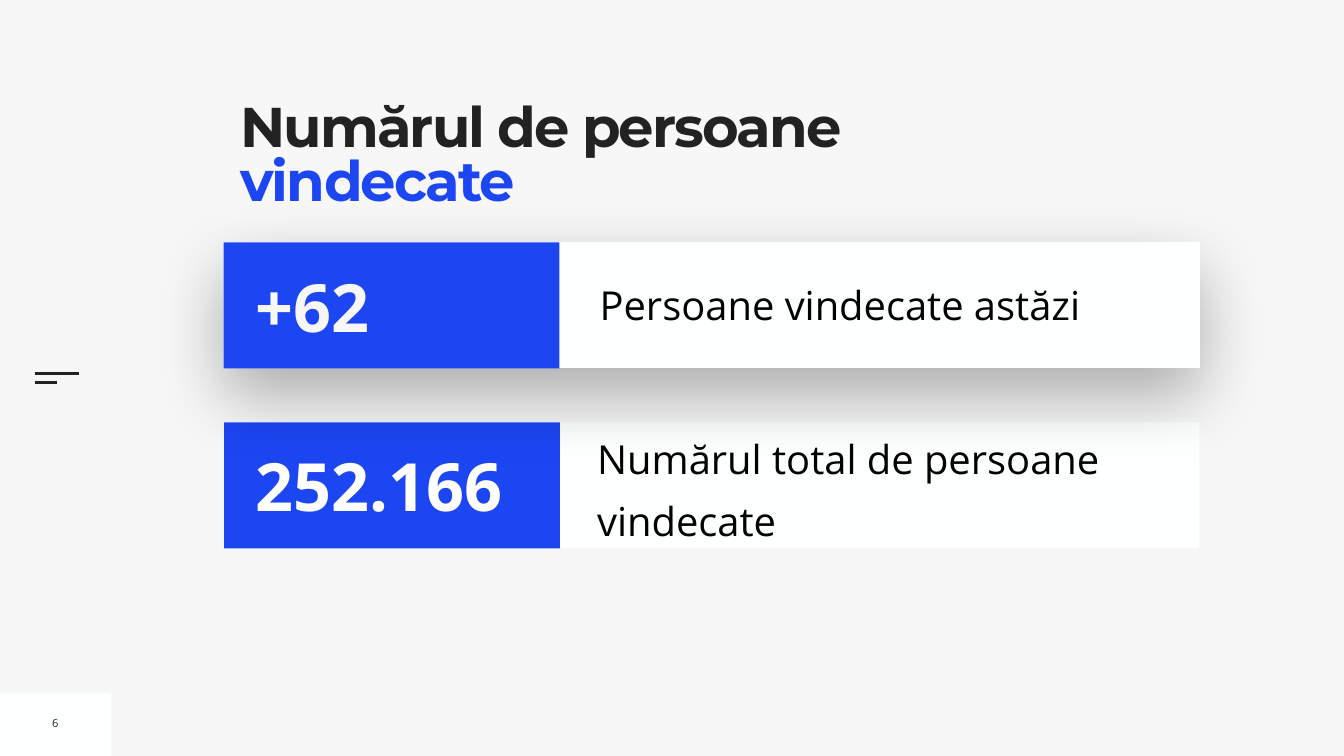
from lxml.etree import SubElement
from pptx import Presentation
from pptx.dml.color import RGBColor
from pptx.enum.shapes import MSO_CONNECTOR, MSO_SHAPE
from pptx.enum.text import MSO_ANCHOR, MSO_AUTO_SIZE, PP_ALIGN
from pptx.oxml.ns import qn
from pptx.util import Inches, Pt

BACKGROUND = RGBColor(0xF7, 0xF7, 0xF7)
PANEL = RGBColor(0xFE, 0xFF, 0xFF)
BLUE = RGBColor(0x1D, 0x46, 0xF3)
DARK = RGBColor(0x22, 0x22, 0x22)
BLACK = RGBColor(0, 0, 0)
WHITE = RGBColor(0xFF, 0xFF, 0xFF)
HEADING_FONT = "Montserrat"
BODY_FONT = "Open Sans"


def add_panel(page, left, top, width, height, color):
    panel = page.shapes.add_shape(MSO_SHAPE.RECTANGLE, Inches(left), Inches(top),
                                  Inches(width), Inches(height))
    panel.shadow.inherit = False
    panel.fill.solid()
    panel.fill.fore_color.rgb = color
    panel.line.fill.background()
    return panel


def add_soft_shadow(shape):
    """Cast a blurred shadow straight down at 30% opacity."""
    effects = shape._element.spPr.find(qn("a:effectLst"))
    shadow = SubElement(effects, qn("a:outerShdw"), blurRad=str(Pt(100)),
                        dist=str(Pt(40)), dir="5400000", rotWithShape="0")
    color = SubElement(shadow, qn("a:srgbClr"), val=str(BLACK))
    SubElement(color, qn("a:alpha"), val="30000")


def add_rule(page, left, top, length):
    rule = page.shapes.add_connector(MSO_CONNECTOR.STRAIGHT, Inches(left), Inches(top),
                                     Inches(left + length), Inches(top))
    rule.line.color.rgb = DARK
    rule.line.width = Pt(3)
    SubElement(rule._element.spPr, qn("a:effectLst"))


def add_text_box(page, left, top, width, height, inset=0.1,
                 anchor=MSO_ANCHOR.MIDDLE, wrap=True, grow=True):
    """Add an empty text box and return its first paragraph."""
    box = page.shapes.add_textbox(Inches(left), Inches(top), Inches(width), Inches(height))
    frame = box.text_frame
    frame.margin_left = frame.margin_right = Inches(inset)
    frame.margin_top = frame.margin_bottom = Inches(inset)
    frame.vertical_anchor = anchor
    frame.word_wrap = wrap
    frame.auto_size = MSO_AUTO_SIZE.SHAPE_TO_FIT_TEXT if grow else MSO_AUTO_SIZE.NONE
    return frame.paragraphs[0]


def add_span(para, text, size, color, font=BODY_FONT, bold=False):
    span = para.add_run()
    span.text = text
    span.font.size = Pt(size)
    span.font.name = font
    span.font.bold = bold
    span.font.color.rgb = color
    return span


def add_title(page):
    para = add_text_box(page, 4.77, 2.07, 13.01, 2.73, inset=0,
                        anchor=MSO_ANCHOR.TOP, grow=False)
    para.line_spacing = 0.8
    for text, color in (("Numărul de persoane ", DARK), ("vindecate", BLUE)):
        span = add_span(para, text, 80, color, HEADING_FONT, bold=True)
        span._r.get_or_add_rPr().set("spc", "-270")


def add_figure(page, left, top, value, color):
    """Add the blue block of a card with its number."""
    add_panel(page, left, top, 6.66, 2.5, BLUE)
    para = add_text_box(page, left + 0.53, top + 0.35, 6.03, 1.8)
    add_span(para, value, 95, color, bold=True)


def add_total_card(page):
    add_panel(page, 4.45, 8.37, 19.35, 2.5, PANEL)
    para = add_text_box(page, 11.85, 8.39, 11.95, 2.36, inset=0)
    para.line_spacing = 1.3
    para.space_before = Pt(20)
    add_span(para, "Numărul total de persoane vindecate", 57, BLACK)
    add_figure(page, 4.45, 8.38, "252.166", WHITE)


def add_today_card(page):
    add_soft_shadow(add_panel(page, 4.44, 4.8, 19.37, 2.5, PANEL))
    para = add_text_box(page, 11.8, 5.47, 11.76, 1.16)
    add_span(para, "Persoane vindecate astăzi", 57, BLACK)
    add_figure(page, 4.44, 4.81, "+62", BACKGROUND)


def add_page_frame(page):
    """Add the corner panel, the two margin rules and the page number."""
    add_panel(page, 0, 13.76, 2.2, 1.24, PANEL)
    add_rule(page, 0.69, 7.41, 0.88)
    add_rule(page, 0.69, 7.59, 0.44)
    para = add_text_box(page, 0.93, 14.09, 0.34, 0.51, wrap=False)
    para.alignment = PP_ALIGN.CENTER
    add_span(para, "6", 16, DARK)


def main():
    deck = Presentation()
    deck.slide_width, deck.slide_height = Inches(26.67), Inches(15)
    page = deck.slides.add_slide(deck.slide_layouts[6])
    page.background.fill.solid()
    page.background.fill.fore_color.rgb = BACKGROUND
    add_page_frame(page)
    add_title(page)
    add_total_card(page)
    add_today_card(page)
    deck.save("out.pptx")


if __name__ == "__main__":
    main()
